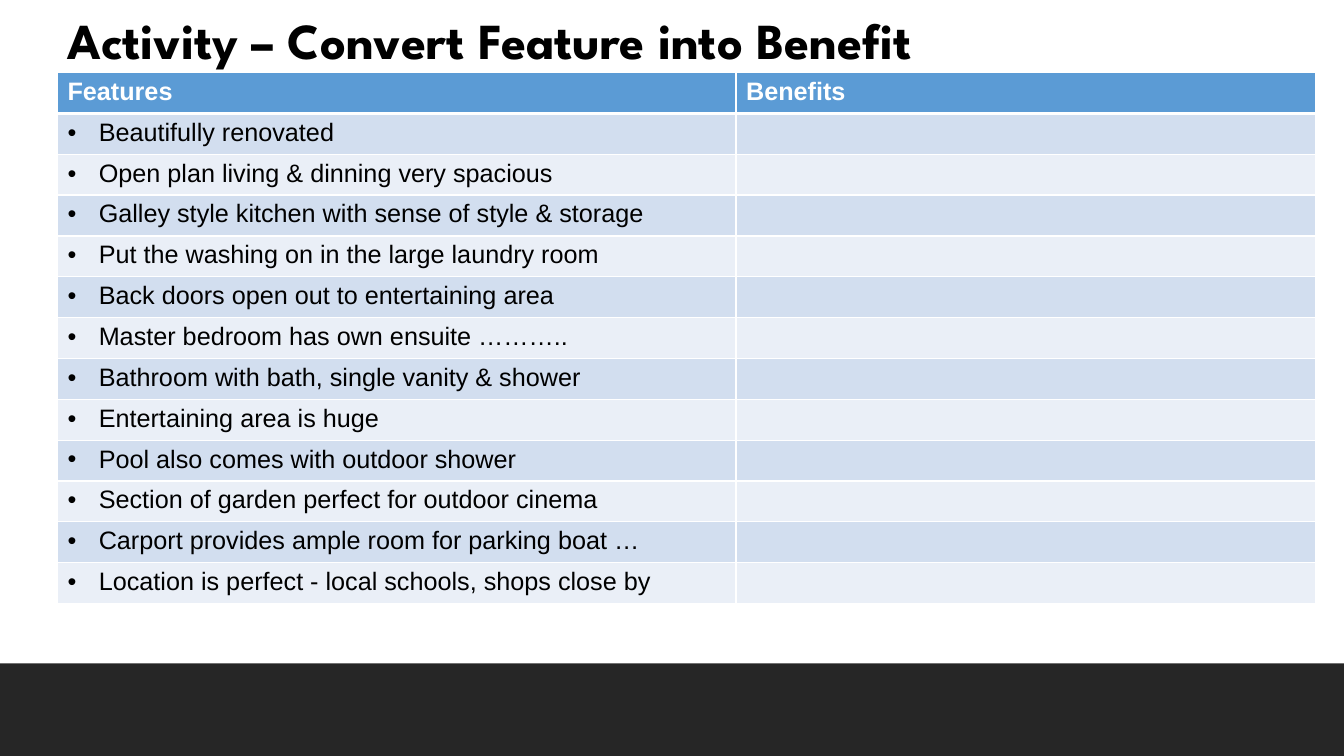
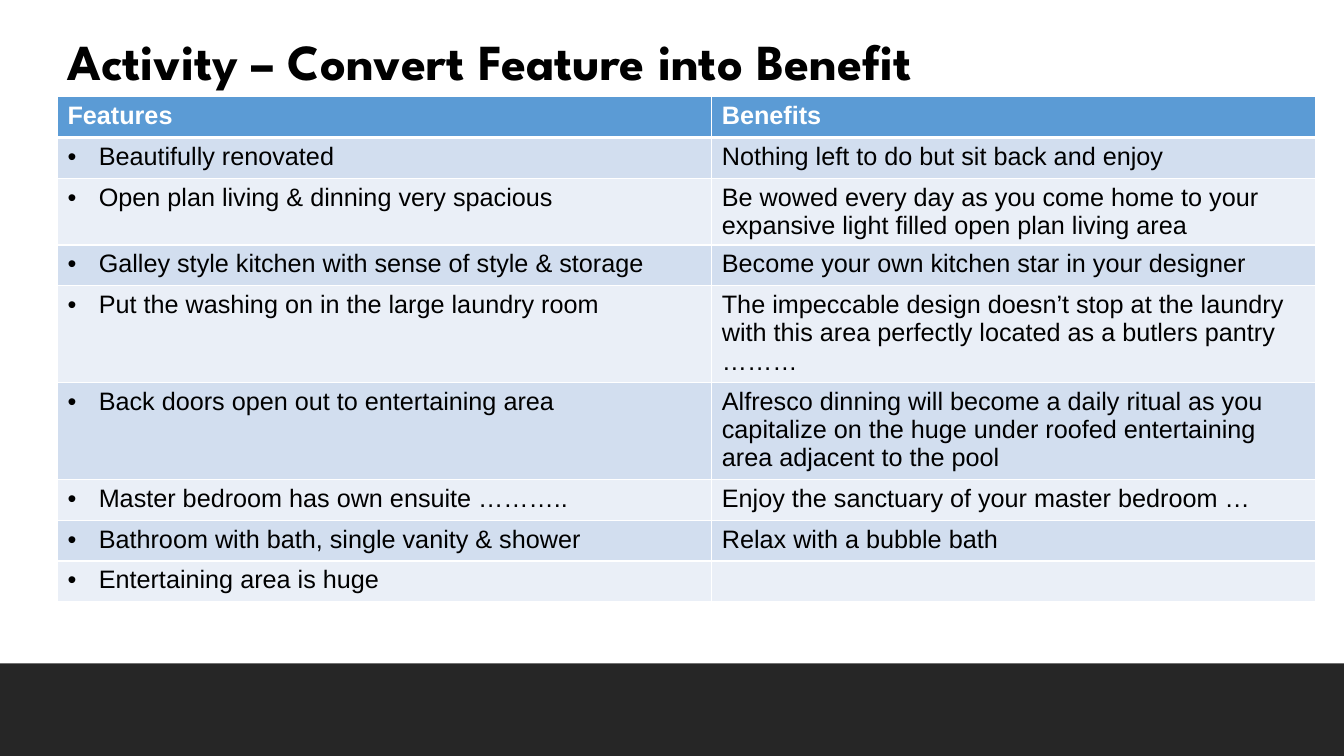
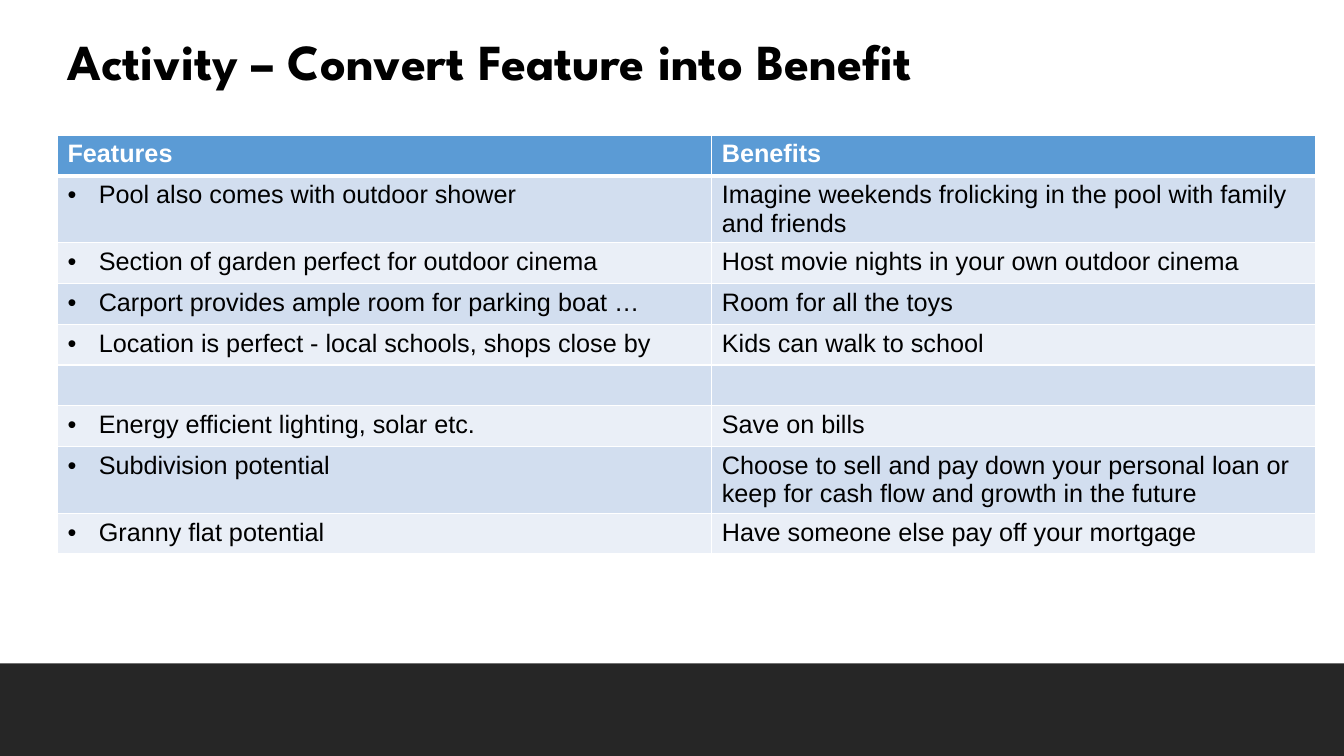
"""Build three slides that turn property features into buyer benefits."""
from lxml.etree import SubElement
from pptx import Presentation
from pptx.dml.color import RGBColor
from pptx.enum.shapes import MSO_SHAPE
from pptx.enum.text import MSO_ANCHOR
from pptx.oxml.ns import qn
from pptx.util import Inches, Pt

TITLE = "Activity – Convert Feature into Benefit"
BLACK, WHITE, CHARCOAL = "000000", "FFFFFF", "262626"
HEADER_BLUE, BAND_DARK, BAND_LIGHT = "5B9BD5", "D2DEEF", "EAEFF7"
LEFT, TABLE_WIDTH, ROW_HEIGHT = 0.57, 12.48, 5.27 / 13

indoors = [
    ("Beautifully renovated", "Nothing left to do but sit back and enjoy"),
    ("Open plan living & dinning very spacious",
     "Be wowed every day as you come home to your expansive light filled open plan living area"),
    ("Galley style kitchen with sense of style & storage",
     "Become your own kitchen star in your designer"),
    ("Put the washing on in the large laundry room",
     "The impeccable design doesn’t stop at the laundry with this area perfectly located "
     "as a butlers pantry ………"),
    ("Back doors open out to entertaining area",
     "Alfresco dinning will become a daily ritual as you capitalize on the huge under roofed "
     "entertaining area adjacent to the pool"),
    ("Master bedroom has own ensuite ………..", "Enjoy the sanctuary of your master bedroom …"),
    ("Bathroom with bath, single vanity & shower", "Relax with a bubble bath"),
    ("Entertaining area is huge", ""),
]
outdoors = [
    ("Pool also comes with outdoor shower",
     "Imagine weekends frolicking in the pool with family and friends"),
    ("Section of garden perfect for outdoor cinema",
     "Host movie nights in your own outdoor cinema"),
    ("Carport provides ample room for parking boat …", "Room for all the toys"),
    ("Location is perfect - local schools, shops close by", "Kids can walk to school"),
]
potential = [
    ("Energy efficient lighting, solar etc.", "Save on bills"),
    ("Subdivision potential",
     "Choose to sell and pay down your personal loan or keep for cash flow and growth in the future"),
    ("Granny flat potential", "Have someone else pay off your mortgage"),
]
unanswered = [(feature, "") for feature, benefit in indoors + outdoors]

activities = [
    (0, 0.72, 6.73, unanswered),
    (0.21, 0.96, 6.49, indoors),
    (0.21, 1.34, 6.49, outdoors + [("", "")] + potential),
]


def paint(fill, color):
    fill.solid()
    fill.fore_color.rgb = RGBColor.from_string(color)


def write(frame, text, size=18, font="Arial", color=BLACK, bold=False, bullet=False, spacing=None):
    paragraph = frame.paragraphs[0]
    if bullet:
        properties = paragraph._p.get_or_add_pPr()
        properties.set("marL", str(Inches(0.31)))
        properties.set("indent", str(-Inches(0.31)))
        SubElement(properties, qn("a:buFont"), typeface="Arial")
        SubElement(properties, qn("a:buChar"), char="•")
    paragraph.line_spacing = spacing
    paragraph.font.size = Pt(size)
    if text:
        run = paragraph.add_run()
        run.text = text
        run.font.size, run.font.name, run.font.bold = Pt(size), font, bold
        run.font.color.rgb = RGBColor.from_string(color)


deck = Presentation()
deck.slide_width, deck.slide_height = Inches(13.33), Inches(7.5)
blank = deck.slide_layouts[6]
slides = [deck.slides.add_slide(blank) for activity in activities]

footer_band = slides[0].shapes.add_shape(
    MSO_SHAPE.RECTANGLE, 0, Inches(6.58), Inches(13.33), Inches(0.92))
footer_band.shadow.inherit = False
footer_band.line.fill.background()
paint(footer_band.fill, CHARCOAL)
deck.slide_master.shapes._spTree.append(footer_band._element)

for slide, (title_top, table_top, feature_width, pairs) in zip(slides, activities):
    paint(slide.background.fill, WHITE)
    title = slide.shapes.add_textbox(
        Inches(LEFT), Inches(title_top), Inches(12.76), Inches(0.75)).text_frame
    title.word_wrap = True
    title.vertical_anchor = MSO_ANCHOR.BOTTOM
    write(title, TITLE, size=36, font="League Spartan", bold=True, spacing=0.9)

    rows = [("Features", "Benefits")] + pairs
    table = slide.shapes.add_table(
        len(rows), 2, Inches(LEFT), Inches(table_top),
        Inches(TABLE_WIDTH), Inches(ROW_HEIGHT * len(rows))).table
    table.horz_banding = False
    table.columns[0].width = Inches(feature_width)
    table.columns[1].width = Inches(TABLE_WIDTH - feature_width)

    for r, pair in enumerate(rows):
        header = r == 0
        row_color = HEADER_BLUE if header else (BAND_LIGHT, BAND_DARK)[r % 2]
        table.rows[r].height = Inches(ROW_HEIGHT)
        for c, text in enumerate(pair):
            cell = table.cell(r, c)
            cell.margin_bottom = Inches(0.01)
            write(cell.text_frame, text, color=WHITE if header else BLACK,
                  bold=header, bullet=bool(text) and c == 0 and not header)
            for side in "LRTB":
                under_header = (r, side) in ((0, "B"), (1, "T"))
                border = SubElement(cell._tc.get_or_add_tcPr(), qn(f"a:ln{side}"),
                                    w=str(Pt(3 if under_header else 1)))
                SubElement(SubElement(border, qn("a:solidFill")), qn("a:srgbClr"), val=WHITE)
            paint(cell.fill, row_color)

deck.save("out.pptx")
